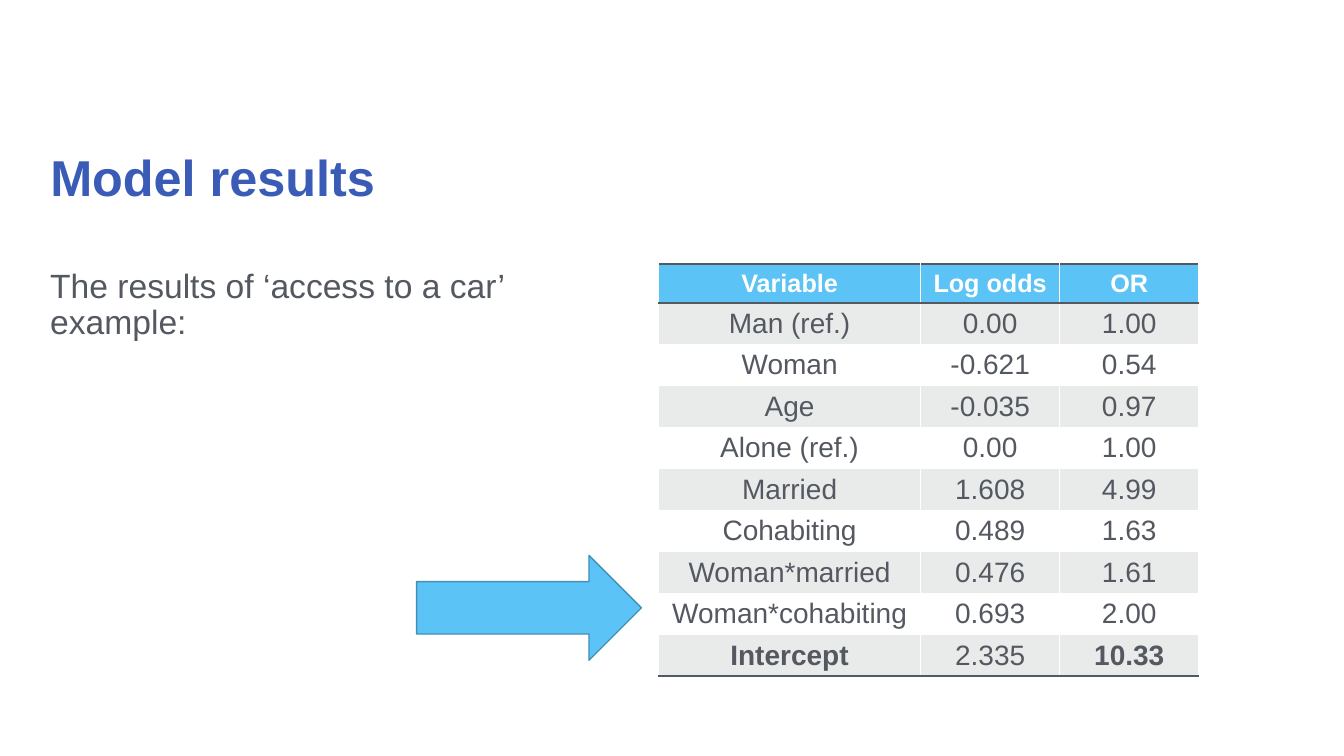
from lxml.etree import SubElement
from pptx import Presentation
from pptx.dml.color import RGBColor
from pptx.enum.shapes import MSO_SHAPE as Shape
from pptx.enum.text import MSO_ANCHOR as Anchor, PP_ALIGN as Align
from pptx.oxml.ns import qn
from pptx.util import Inches, Pt

SKY, SKY_EDGE, BLUE = "5BC3F5", "4390B5", "3A5CB7"
SLATE, BAND, WHITE = "545860", "E9EAEA", "FFFFFF"

HEADINGS = ("Variable", "Log odds", "OR")
RESULTS = [
    ("Man (ref.)", "0.00", "1.00"),
    ("Woman", "-0.621", "0.54"),
    ("Age", "-0.035", "0.97"),
    ("Alone (ref.)", "0.00", "1.00"),
    ("Married", "1.608", "4.99"),
    ("Cohabiting", "0.489", "1.63"),
    ("Woman*married", "0.476", "1.61"),
    ("Woman*cohabiting", "0.693", "2.00"),
    ("Intercept", "2.335", "10.33"),
]
BOLD_RESULTS = ("Intercept", "10.33")


def color(code):
    return RGBColor.from_string(code)


class Page:
    """A slide whose lengths are percentages of its width and height."""

    font = "Arial"

    def __init__(self, deck):
        self.width, self.height = deck.slide_width, deck.slide_height
        self.slide = deck.slides.add_slide(deck.slide_layouts[6])

    def across(self, share):
        return round(self.width * share / 100)

    def down(self, share):
        return round(self.height * share / 100)

    def place(self, left, top, width, height):
        return self.across(left), self.down(top), self.across(width), self.down(height)

    def add_span(self, para, words, size, code, bold=False):
        span = para.add_run()
        span.text = words
        span.font.name, span.font.size, span.font.bold = self.font, Pt(size), bold
        span.font.color.rgb = color(code)

    def text(self, area, words, size, code, bold=False, anchor=Anchor.TOP):
        frame = self.slide.shapes.add_textbox(*self.place(*area)).text_frame
        frame.word_wrap, frame.vertical_anchor = True, anchor
        para = frame.paragraphs[0]
        para.line_spacing = 0.9
        self.add_span(para, words, size, code, bold)

    def arrow(self, area, fill, edge):
        arrow = self.slide.shapes.add_shape(Shape.RIGHT_ARROW, *self.place(*area))
        arrow.shadow.inherit = False
        arrow.fill.solid()
        arrow.fill.fore_color.rgb = color(fill)
        arrow.line.color.rgb = color(edge)
        arrow.line.width = Pt(1)

    def rule(self, cell, side):
        """Draw a cell border; call before the cell is filled."""
        line = SubElement(cell._tc.get_or_add_tcPr(), qn(f"a:ln{side}"), w=str(Pt(2)))
        fill = SubElement(line, qn("a:solidFill"))
        SubElement(fill, qn("a:srgbClr"), val=SLATE)

    def cell(self, cell, words, size, code, bold, fill, sides):
        for side in sides:
            self.rule(cell, side)
        cell.fill.solid()
        cell.fill.fore_color.rgb = color(fill)
        cell.margin_top = cell.margin_bottom = 0
        cell.vertical_anchor = Anchor.MIDDLE
        para = cell.text_frame.paragraphs[0]
        para.alignment = Align.CENTER
        self.add_span(para, words, size, code, bold)

    def table(self, left, top, columns, head_height, row_height):
        heights = [head_height] + [row_height] * len(RESULTS)
        area = self.place(left, top, sum(columns), sum(heights))
        table = self.slide.shapes.add_table(len(heights), len(columns), *area).table
        table.first_row = table.horz_banding = False
        for column, width in zip(table.columns, columns):
            column.width = self.across(width)
        for row, height in zip(table.rows, heights):
            row.height = self.down(height)
        for c, heading in enumerate(HEADINGS):
            self.cell(table.cell(0, c), heading, 18, WHITE, True, SKY, "TB")
        for r, result in enumerate(RESULTS, 1):
            fill = BAND if r % 2 else WHITE
            sides = "B" if r == len(RESULTS) else ""
            for c, words in enumerate(result):
                bold = words in BOLD_RESULTS
                self.cell(table.cell(r, c), words, 20, SLATE, bold, fill, sides)


def main():
    deck = Presentation()
    deck.slide_width, deck.slide_height = Inches(13.33), Inches(7.5)
    page = Page(deck)
    page.text((3, 14.13, 94, 19.33), "Model results", 36, BLUE, True, Anchor.MIDDLE)
    page.text((3, 34.93, 43.5, 55.73), "The results of ‘access to a car’ example:", 24, SLATE)
    page.table(49, 34.93, (19.5, 10.35, 10.35), 5.13, 5.49)
    page.arrow((31, 73.47, 16.73, 13.87), SKY, SKY_EDGE)
    deck.save("out.pptx")


if __name__ == "__main__":
    main()
